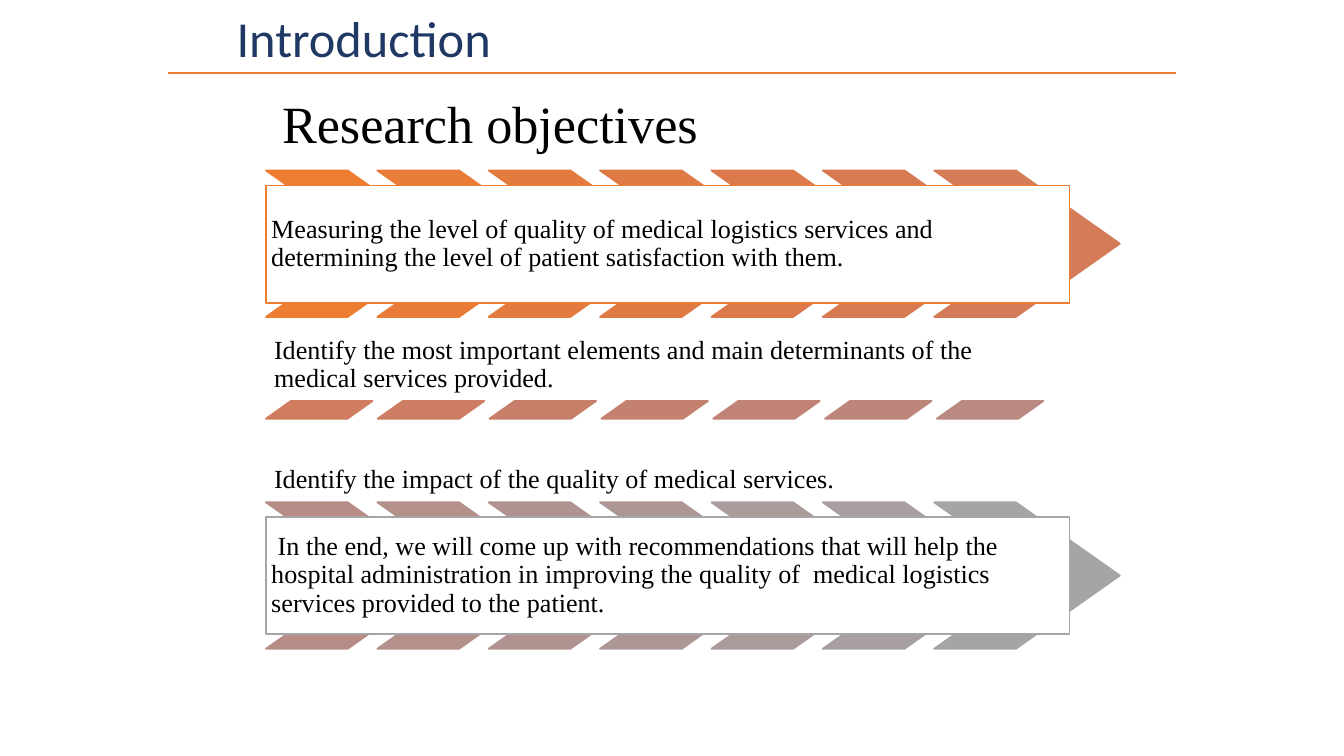
from pptx import Presentation
from pptx.dml.color import RGBColor
from pptx.enum.shapes import MSO_CONNECTOR, MSO_SHAPE
from pptx.enum.text import MSO_ANCHOR, PP_ALIGN
from pptx.oxml.ns import qn
from pptx.util import Pt
from lxml import etree

WHITE = RGBColor(0xFF, 0xFF, 0xFF)
BLACK = RGBColor(0x00, 0x00, 0x00)
NAVY = RGBColor(0x20, 0x38, 0x64)
# Three bands fading from orange to grey
FADE = [[RGBColor.from_string(code) for code in row.split()] for row in (
    "ED7D31 E97C38 E47B3E E07A45 DC7A4B D87A51 D47B58",
    "D07C5E CC7D64 C87F6A C48170 C18375 BD867B BA8981",
    "B78C86 B4908B B09391 AD9796 AB9C9B A8A0A0 A5A5A5",
)]
ORANGE = FADE[0][0]
GREY = FADE[2][-1]
LEFT = 142.5

deck = Presentation()
deck.slide_width = Pt(720)
deck.slide_height = Pt(405)
slide = deck.slides.add_slide(deck.slide_layouts[5])
shapes = slide.shapes


def add_block(kind, x, y, w, h, fill, line):
    block = shapes.add_shape(kind, Pt(x), Pt(y), Pt(w), Pt(h))
    block.shadow.inherit = False
    block.fill.solid()
    block.fill.fore_color.rgb = fill
    block.line.color.rgb = line
    block.line.width = Pt(1)
    return block


def set_text(shape, text, size, inset, anchor):
    frame = shape.text_frame
    frame.word_wrap = True
    frame.vertical_anchor = anchor
    frame.margin_left = frame.margin_right = Pt(inset)
    frame.margin_top = frame.margin_bottom = Pt(inset)
    frame.text = text
    para = frame.paragraphs[0]
    para.alignment = PP_ALIGN.LEFT
    para.line_spacing = 0.9
    font = para.runs[0].font
    font.name = "Times New Roman"
    font.size = Pt(size)
    font.color.rgb = BLACK


# Bands: shape, top, width, height, adjustment, step
bands = [
    (MSO_SHAPE.CHEVRON, 91.3, 99.4, 78.5, 0.71, 59.66),
    (MSO_SHAPE.PARALLELOGRAM, 214.8, 57, 9.5, 1.41, 59.9),
    (MSO_SHAPE.CHEVRON, 269.1, 99.4, 78.5, 0.71, 59.66),
]
for (kind, top, wide, high, bend, step), row in zip(bands, FADE):
    for i, color in enumerate(row):
        block = add_block(kind, LEFT + i * step, top, wide, high, color, color)
        block.adjustments[0] = bend

# Framed objectives over the chevrons
frames = [
    (99.4, ORANGE, "Measuring the level of quality of medical logistics services "
     "and determining the level of patient satisfaction with them."),
    (276.8, GREY, " In the end, we will come up with recommendations that will "
     "help the hospital administration in improving the quality of  medical "
     "logistics services provided to the patient."),
]
for top, color, text in frames:
    card = add_block(MSO_SHAPE.RECTANGLE, LEFT, top, 430.5, 62.8, WHITE, color)
    set_text(card, text, 14, 2.8, MSO_ANCHOR.MIDDLE)

# Heading and plain objectives
labels = [
    (52.7, 28, 8.6, "Research objectives"),
    (176.4, 14, 4.3, "Identify the most important elements and main "
     "determinants of the medical services provided."),
    (230.5, 14, 4.3, "Identify the impact of the quality of medical services."),
]
for top, size, inset, text in labels:
    label = shapes.add_textbox(Pt(LEFT), Pt(top), Pt(425), Pt(38.6))
    set_text(label, text, size, inset, MSO_ANCHOR.BOTTOM)

# Rule under the title
rule = shapes.add_connector(MSO_CONNECTOR.STRAIGHT, Pt(90), Pt(39), Pt(630), Pt(39))
rule.line.color.rgb = ORANGE
rule.line.width = Pt(1)
etree.SubElement(rule._element.spPr, qn("a:effectLst"))

# Title, with room to stay on one line
title = shapes.title
title.left, title.top, title.width, title.height = Pt(119.5), Pt(0), Pt(180), Pt(40.3)
frame = title.text_frame
frame.text = "Introduction"
frame.word_wrap = True
frame.vertical_anchor = MSO_ANCHOR.TOP
para = frame.paragraphs[0]
para.alignment = PP_ALIGN.LEFT
font = para.runs[0].font
font.name = "Calibri"
font.size = Pt(27)
font.color.rgb = NAVY

deck.save("out.pptx")
